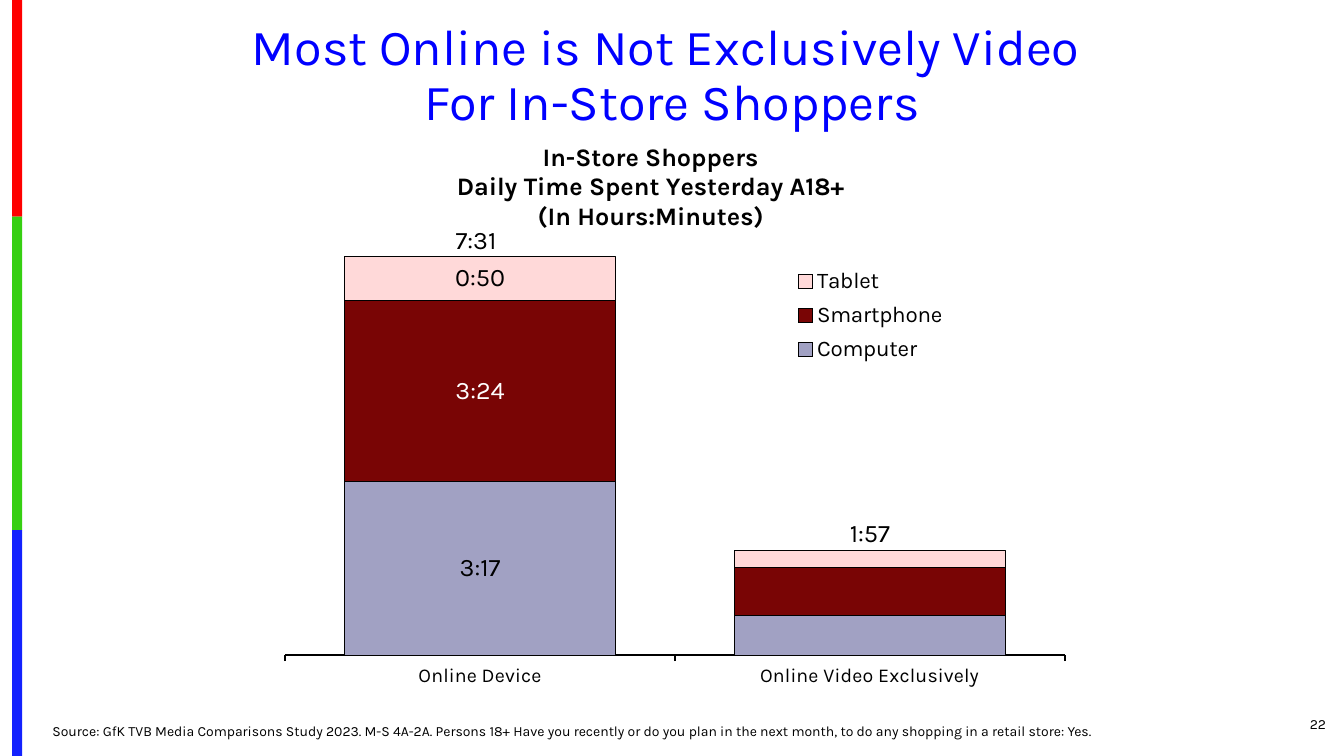
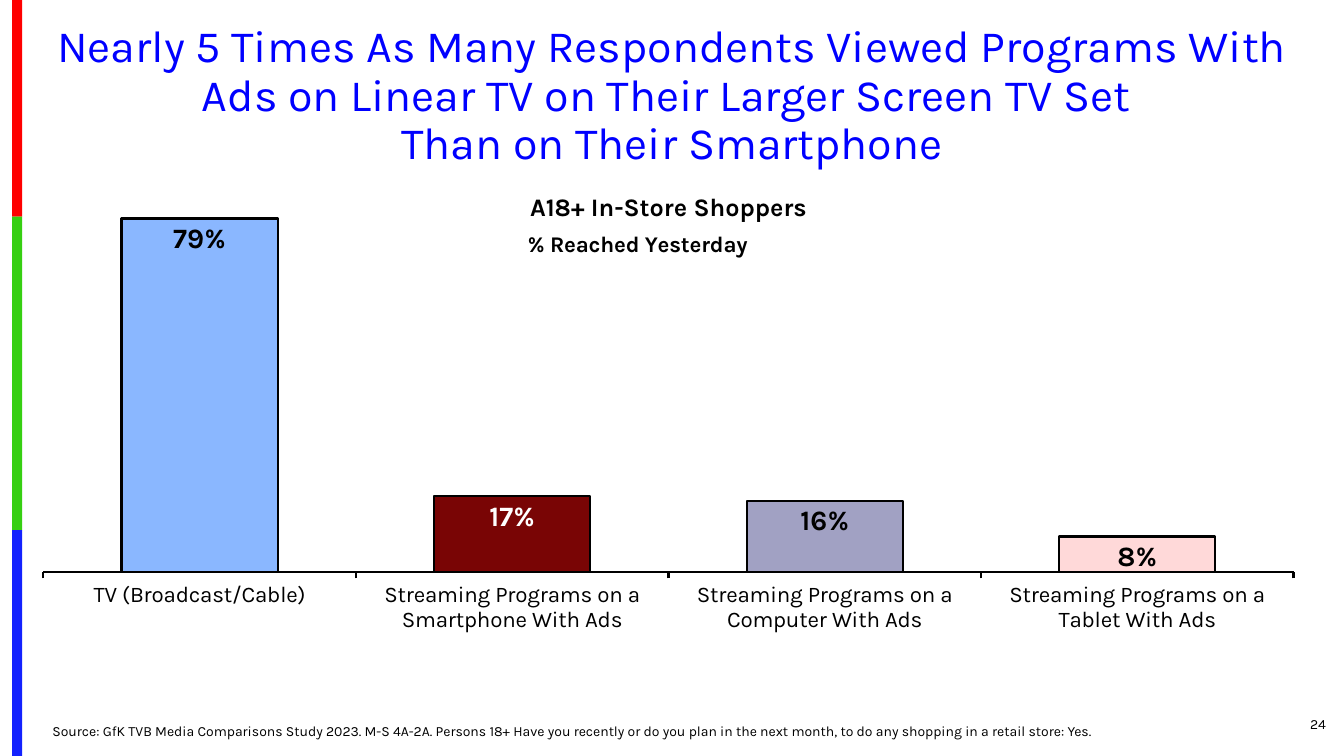
from pptx import Presentation
from pptx.chart.data import CategoryChartData
from pptx.dml.color import RGBColor
from pptx.enum.chart import XL_CHART_TYPE as Kind
from pptx.enum.chart import XL_LABEL_POSITION as LabelAt
from pptx.enum.chart import XL_LEGEND_POSITION as LegendAt
from pptx.enum.chart import XL_TICK_MARK as Tick
from pptx.enum.shapes import MSO_SHAPE as Preset
from pptx.enum.text import MSO_ANCHOR as Anchor
from pptx.enum.text import MSO_AUTO_SIZE as AutoSize
from pptx.enum.text import PP_ALIGN as Align
from pptx.oxml import parse_xml
from pptx.oxml.ns import nsdecls
from pptx.util import Inches, Pt

FONT = "Karla"
COLORS = {
    "black": "000000",
    "white": "FFFFFF",
    "title": "0000FF",
    "red band": "FE0000",
    "green band": "36CF12",
    "blue band": "1322FE",
    "tv": "8AB7FF",
    "smartphone": "790505",
    "computer": "A1A1C3",
    "tablet": "FFD9D9",
}
BANDS = [("red band", 0, 2.15), ("green band", 2.15, 5.26), ("blue band", 5.26, 7.5)]
SOURCE = (
    "Source: GfK TVB Media Comparisons Study 2023. M-S 4A-2A. Persons 18+ Have you "
    "recently or do you plan in the next month, to do any shopping in a retail store: Yes."
)
SOURCE_BOTTOM = 7.39


def rgb(name):
    return RGBColor.from_string(COLORS[name])


def assign(target, **values):
    for key, value in values.items():
        setattr(target, key, value)


def style_font(font, size, color="black", bold=False):
    assign(font, name=FONT, size=Pt(size), bold=bold)
    font.color.rgb = rgb(color)


def move(placeholder, box):
    for side, length in zip(("left", "top", "width", "height"), box):
        setattr(placeholder, side, Inches(length))


def write(shape, text, size, color="black", bold=False, align=Align.LEFT,
          anchor=Anchor.TOP, wrap=True, spacing=1.0):
    frame = shape.text_frame
    assign(frame, text=text, word_wrap=wrap, auto_size=AutoSize.NONE, vertical_anchor=anchor)
    for paragraph in frame.paragraphs:
        assign(paragraph, alignment=align, line_spacing=spacing, space_before=Pt(0))
        for run in paragraph.runs:
            style_font(run.font, size, color, bold)


def add_label(slide, box, text, size, **look):
    write(slide.shapes.add_textbox(*map(Inches, box)), text, size, **look)


def add_master_bands(master, slide):
    for number, (color, top, bottom) in enumerate(BANDS, 20):
        band = slide.shapes.add_shape(
            Preset.RECTANGLE, Inches(0.12), Inches(top), Inches(0.1), Inches(bottom - top))
        band.shadow.inherit = False
        band.fill.solid()
        band.fill.fore_color.rgb = rgb(color)
        band.line.fill.background()
        band.element.nvSpPr.cNvPr.set("id", str(number))
        master.element.cSld.spTree.append(band.element)


def add_title(slide, box, text, size):
    move(slide.shapes.title, box)
    write(slide.shapes.title, text, size, color="title", align=Align.CENTER, spacing=0.9)


def add_footer(slide, number, height):
    source = slide.placeholders[1]
    move(source, (0.42, SOURCE_BOTTOM - height, 10.67, height))
    write(source, SOURCE, 10, anchor=Anchor.BOTTOM, spacing=0.9)
    properties = source.text_frame.paragraphs[0]._p.get_or_add_pPr()
    for indent in ("marL", "indent"):
        properties.set(indent, "0")
    properties.append(parse_xml(f"<a:buNone {nsdecls('a')}/>"))
    add_label(slide, (12.17, 6.98, 1.08, 0.4), str(number), 10,
              align=Align.RIGHT, anchor=Anchor.MIDDLE)


def lay_out(chart, part, part_box, chart_box):
    element = chart.element.xpath(f"c:chart/c:{part}")[0]
    for old in element.xpath("c:layout"):
        element.remove(old)
    inner = part == "plotArea"
    target = '<c:layoutTarget val="inner"/>' if inner else ""
    modes = "".join(f'<c:{axis}Mode val="edge"/>' for axis in "xy")
    lengths = "".join(f'<c:{key} val="{length / whole:.4f}"/>'
                      for key, length, whole in zip("xywh", part_box, chart_box[2:] * 2))
    element.insert(0 if inner else 1, parse_xml(
        f"<c:layout {nsdecls('c')}><c:manualLayout>{target}{modes}{lengths}"
        "</c:manualLayout></c:layout>"))


def paint(form, fill, line_width):
    form.fill.solid()
    form.fill.fore_color.rgb = rgb(fill)
    form.line.color.rgb = rgb("black")
    form.line.width = Pt(line_width)


def add_columns(slide, box, kind, categories, series, number_format, title, title_size,
                maximum, axis_size, line_width, label, plot_format, part_boxes):
    data = CategoryChartData(number_format=number_format)
    data.categories = categories
    for name, values, _, _ in series:
        data.add_series(name, values)
    chart = slide.shapes.add_chart(kind, *map(Inches, box), data).chart
    chart.element.chart.addnext(parse_xml(
        f"<c:spPr {nsdecls('c', 'a')}><a:noFill/><a:ln><a:noFill/></a:ln></c:spPr>"))
    style_font(chart.font, 10)

    chart.has_title = True
    chart.chart_title.text_frame.text = title
    for paragraph in chart.chart_title.text_frame.paragraphs:
        for run in paragraph.runs:
            style_font(run.font, title_size, bold=True)

    chart.has_legend = "legend" in part_boxes
    if chart.has_legend:
        assign(chart.legend, position=LegendAt.RIGHT, include_in_layout=False)
        style_font(chart.legend.font, 16)

    assign(chart.value_axis, visible=False, has_major_gridlines=False,
           minimum_scale=0, maximum_scale=maximum)
    axis = chart.category_axis
    assign(axis, major_tick_mark=Tick.OUTSIDE, has_major_gridlines=False)
    style_font(axis.tick_labels.font, axis_size)
    axis.format.line.color.rgb = rgb("black")
    axis.format.line.width = Pt(1.5)

    plot = chart.plots[0]
    assign(plot, vary_by_categories=False, **plot_format)
    for bars, (_, _, fills, label_colors) in zip(plot.series, series):
        bars.data_labels.show_value = False
        paint(bars.format, fills[0], line_width)
        if len(fills) > 1:
            for index, fill in enumerate(fills):
                paint(bars.points[index].format, fill, line_width)
        for index, color in enumerate(label_colors):
            point_label = bars.points[index].data_label
            style_font(point_label.font, label["size"], color, label["bold"])
            point_label.position = label["position"]

    for part, part_box in part_boxes.items():
        lay_out(chart, part, part_box, box)


def build_time_slide(slide):
    add_title(slide, (0.25, 0.17, 12.83, 1.19),
              "Most Online is Not Exclusively Video \nFor In-Store Shoppers", 36)
    add_footer(slide, 22, 0.25)
    add_columns(
        slide, (1.92, 0.83, 8.79, 6.25), Kind.COLUMN_STACKED,
        ["Online Device", "Online Video Exclusively"],
        [("Computer", (0.137, 0.031), ["computer"], ["black"]),
         ("Smartphone", (0.142, 0.038), ["smartphone"], ["white"]),
         ("Tablet", (0.035, 0.013), ["tablet"], ["black"])],
        "h:mm;@",
        "In-Store Shoppers\nDaily Time Spent Yesterday A18+\n(In Hours:Minutes)", 18,
        maximum=0.35, axis_size=14, line_width=0.75,
        label={"size": 18, "bold": False, "position": LabelAt.CENTER},
        plot_format={"gap_width": 44, "overlap": 100},
        part_boxes={"title": (2.58, 0.54), "plotArea": (0.91, 1.26, 7.73, 4.41),
                    "legend": (5.88, 1.75, 1.67, 1.1)})
    for left, top, total in [(8.33, 5.08, "1:57"), (4.42, 2.18, "7:31")]:
        add_label(slide, (left, top, 0.71, 0.4), total, 18, wrap=False)


def build_reach_slide(slide):
    add_title(slide, (0.46, 0.19, 12.42, 1.56),
              "Nearly 5 Times As Many Respondents Viewed Programs With Ads on Linear TV "
              "on Their Larger Screen TV Set \vThan on Their Smartphone", 32)
    add_footer(slide, 24, 0.4)
    devices = ["Smartphone", "Computer", "Tablet"]
    add_columns(
        slide, (0.42, 1.3, 12.42, 5.87), Kind.COLUMN_CLUSTERED,
        ["TV (Broadcast/Cable)"] + [f"Streaming Programs on a {device} With Ads"
                                    for device in devices],
        [("Series 1", (0.79, 0.17, 0.16, 0.08),
          ["tv", "smartphone", "computer", "tablet"],
          ["black", "white", "black", "black"])],
        "0%", "% Reached Yesterday", 16,
        maximum=0.9, axis_size=16, line_width=1.5,
        label={"size": 20, "bold": True, "position": LabelAt.INSIDE_END},
        plot_format={"gap_width": 100},
        part_boxes={"title": (4.77, 0.94), "plotArea": (0, 0.38, 12.42, 4)})
    add_label(slide, (2.92, 1.85, 7.42, 0.4), "A18+ In-Store Shoppers", 18,
              bold=True, align=Align.CENTER)


def main():
    deck = Presentation()
    assign(deck, slide_width=Inches(13.33), slide_height=Inches(7.5))
    layout = deck.slide_layouts[1]
    time_slide, reach_slide = [deck.slides.add_slide(layout) for _ in range(2)]
    add_master_bands(deck.slide_master, time_slide)
    build_time_slide(time_slide)
    build_reach_slide(reach_slide)
    deck.save("out.pptx")


if __name__ == "__main__":
    main()
